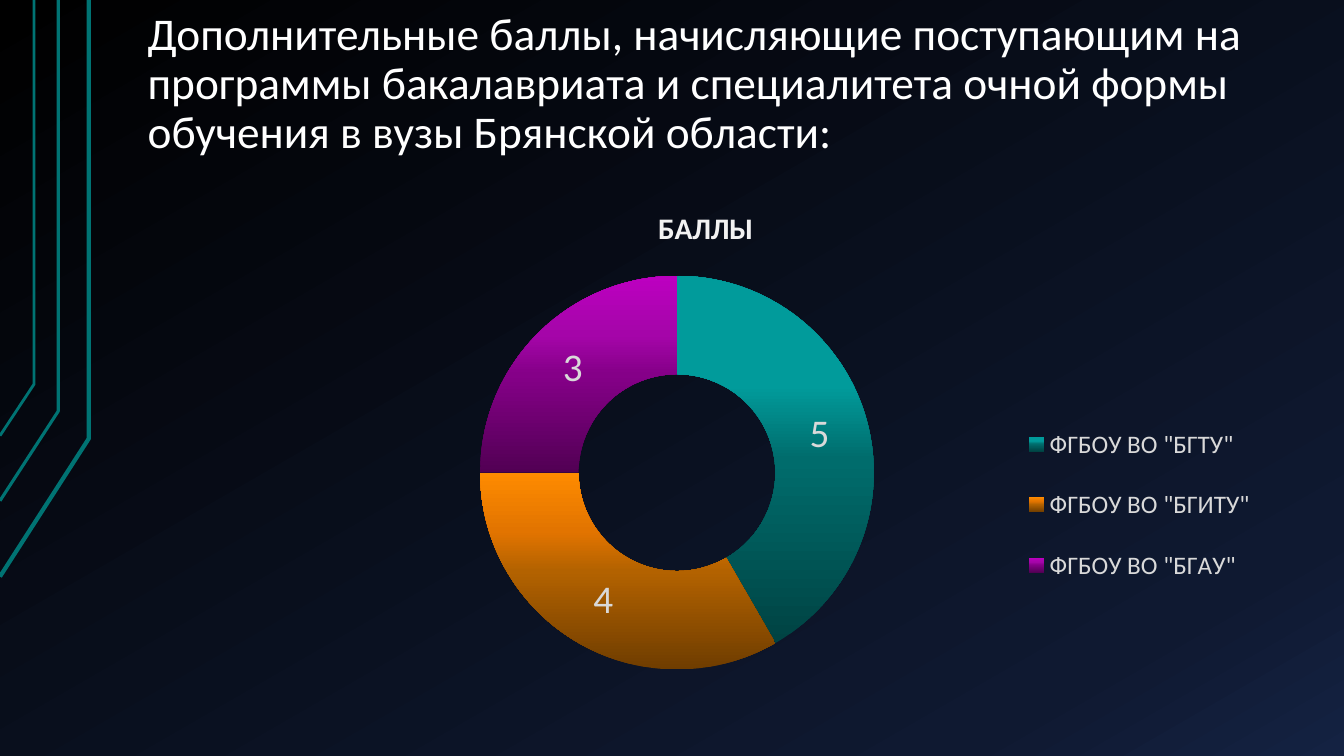
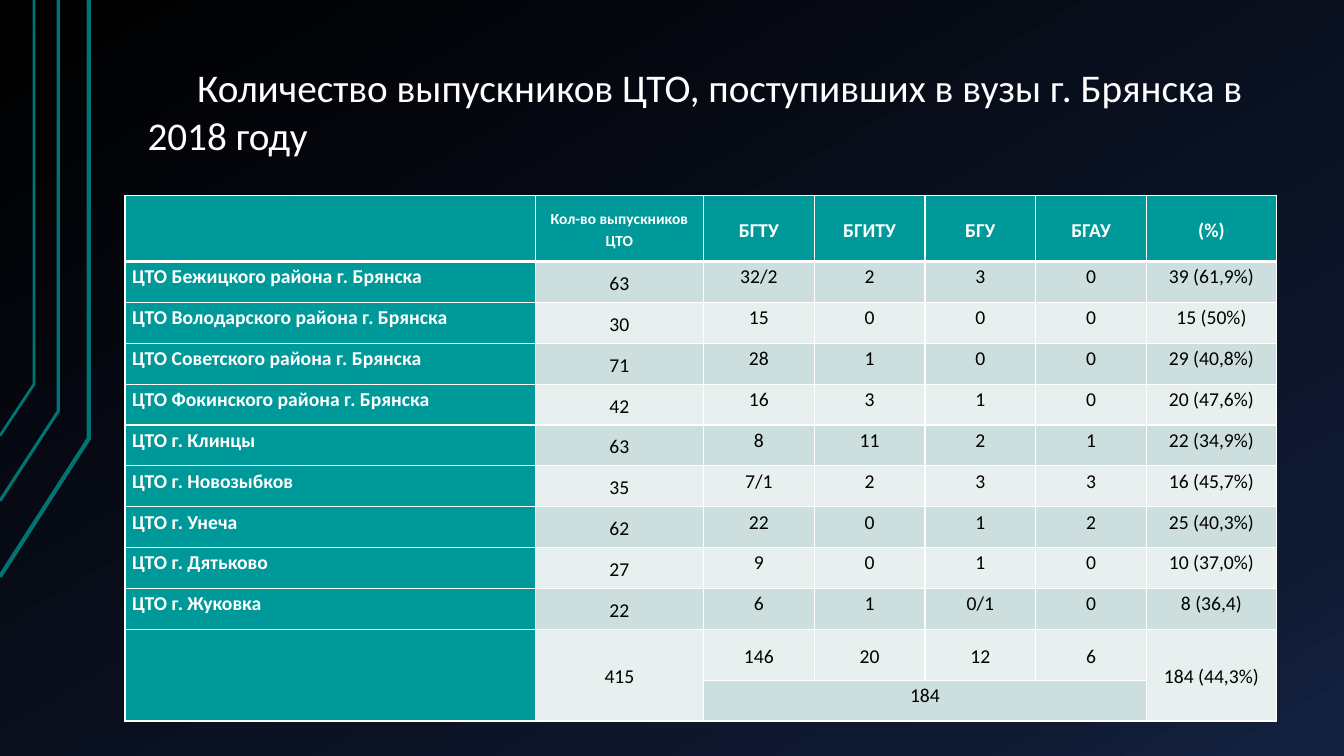
from pptx import Presentation
from pptx.chart.data import CategoryChartData as Data
from pptx.dml.color import RGBColor
from pptx.enum.chart import XL_CHART_TYPE as Kind, XL_LEGEND_POSITION as Side
from pptx.enum.text import MSO_ANCHOR as Anchor, MSO_AUTO_SIZE as Fit, PP_ALIGN as Align
from pptx.oxml import parse_xml
from pptx.oxml.ns import nsdecls, qn
from pptx.util import Cm, Pt

FONT = "Calibri"
WHITE, BLACK, TEAL, EDGE = "FFFFFF", "000000", "009999", "007373"
BANDS = ("E7EFEF", "CCDEDE")
NIGHT = ((0, "000000"), (85, "0F1931"), (100, "142242"))
# Corner points in cm, then line width in points
RAILS = (
    ((0, 14.53), (2.24, 11.05), (2.24, 0), 3),
    ((0, 12.62), (1.47, 10.36), (1.47, 0), 2.25),
    ((0, 10.98), (0.86, 9.68), (0.86, 0), 2),
)


def tint(code):
    return RGBColor.from_string(code)


def style(font, size, code, bold=False):
    font.name, font.size, font.bold = FONT, Pt(size), bold
    font.color.rgb = tint(code)


def shade(grad, stops, angle):
    """Refill a gradFill element with (percent, colour) stops."""
    marks = "".join(
        f'<a:gs pos="{pos * 1000}"><a:srgbClr val="{code}"/></a:gs>'
        for pos, code in stops)
    for child in list(grad):
        grad.remove(child)
    grad.append(parse_xml(f'<a:gsLst {nsdecls("a")}>{marks}</a:gsLst>'))
    grad.append(parse_xml(
        f'<a:lin {nsdecls("a")} ang="{angle * 60000}" scaled="0"/>'))


def place(part, index, box, inner=False):
    """Give a chart part a manual layout, in fractions of the chart."""
    for old in part.findall(qn("c:layout")):
        part.remove(old)
    target = '<c:layoutTarget val="inner"/>' if inner else ""
    modes = '<c:xMode val="edge"/><c:yMode val="edge"/>'
    sizes = "".join(f'<c:{key} val="{val}"/>' for key, val in zip("xywh", box))
    part.insert(index, parse_xml(
        f'<c:layout {nsdecls("c")}><c:manualLayout>{target}{modes}{sizes}'
        '</c:manualLayout></c:layout>'))


def frame(cell, top, bottom):
    """Draw white cell borders, widths in points."""
    props = cell._tc.get_or_add_tcPr()
    for index, (side, width) in enumerate(zip("LRTB", (1, 1, top, bottom))):
        props.insert(index, parse_xml(
            f'<a:ln{side} {nsdecls("a")} w="{Pt(width)}"><a:solidFill>'
            f'<a:srgbClr val="{WHITE}"/></a:solidFill></a:ln{side}>'))


class Deck:
    def __init__(self):
        self.prs = Presentation()
        self.prs.slide_width, self.prs.slide_height = Cm(33.87), Cm(19.05)
        self.slide = None
        master = self.prs.slide_master
        master.background.fill.gradient()
        shade(next(master.element.iter(qn("a:gradFill"))), NIGHT, 60)

    def rails(self):
        """Put the corner lines on the master, behind every slide."""
        for number, (start, *rest, width) in enumerate(RAILS, 101):
            pen = self.slide.shapes.build_freeform(*map(Cm, start))
            pen.add_line_segments([(Cm(x), Cm(y)) for x, y in rest], close=False)
            rail = pen.convert_to_shape()
            rail.fill.background()
            rail.line.color.rgb, rail.line.width = tint(EDGE), Pt(width)
            rail.shadow.inherit = False
            rail.element.nvSpPr.cNvPr.set("id", str(number))
            self.prs.slide_master.shapes.element.append(rail.element)

    def page(self, text, size, space=1.0, indent=0):
        first = self.slide is None
        self.slide = self.prs.slides.add_slide(self.prs.slide_layouts[5])
        if first:
            self.rails()
        title = self.slide.shapes.title
        title.left, title.top = Cm(3.39), Cm(0.76)
        title.width, title.height = Cm(28.78), Cm(3.4)
        body = title.text_frame
        body.word_wrap, body.auto_size = True, Fit.NONE
        body.vertical_anchor = Anchor.BOTTOM
        body.margin_left = body.margin_right = Cm(0.33)
        body.margin_top = body.margin_bottom = Cm(0.18)
        para = body.paragraphs[0]
        para.alignment, para.line_spacing = Align.LEFT, space
        para._p.get_or_add_pPr().set("indent", str(Cm(indent)))
        run = para.add_run()
        run.text = text
        style(run.font, size, WHITE)

    def ring(self, name, parts):
        """Add a doughnut of (category, value, gradient) parts."""
        data = Data()
        data.categories = [part[0] for part in parts]
        data.add_series(name, [part[1] for part in parts])
        chart = self.slide.shapes.add_chart(
            Kind.DOUGHNUT, Cm(3.39), Cm(4.72), Cm(28.78), Cm(12.4), data).chart
        style(chart.font, 10, WHITE)

        chart.has_title = True
        run = chart.chart_title.text_frame.paragraphs[0].add_run()
        run.text = name
        style(run.font, 21.3, "F2F2F2", True)
        chart.chart_title.include_in_layout = False

        chart.has_legend = True
        legend = chart.legend
        legend.position, legend.include_in_layout = Side.RIGHT, False
        style(legend.font, 18, "D9D9D9")
        place(legend._element, 1, (0.77, 0.43, 0.22, 0.43))

        plot = chart.plots[0]
        plot.vary_by_categories = plot.has_data_labels = True
        labels = plot.data_labels
        labels.show_value, labels.show_percentage = True, False
        style(labels.font, 28, "D9D9D9")
        for index in range(len(parts)):
            look = plot.series[0].points[index].format
            look.fill.gradient()
            look.line.fill.background()
        root = chart.element
        for grad, part in zip(root.iter(qn("a:gradFill")), parts):
            shade(grad, part[2], 270)
        place(next(root.iter(qn("c:plotArea"))), 0, (0.3, 0.18, 0.35, 0.8), True)
        next(root.iter(qn("c:holeSize"))).set("val", "75")

    def cell(self, cell, text, size, code, bold, gap, align, anchor):
        cell.margin_left = cell.margin_right = Cm(0.18)
        cell.margin_top = cell.margin_bottom = 0
        cell.vertical_anchor = anchor
        if not text:
            return
        para = cell.text_frame.paragraphs[0]
        para.alignment, para.line_spacing = align, 1.15
        para.space_before = para.space_after = Pt(gap)
        run = para.add_run()
        run.text = text
        style(run.font, size, code, bold)

    def table(self, rows, widths, heights, spans):
        grid = self.slide.shapes.add_table(
            len(rows), len(widths), Cm(3.15), Cm(4.93),
            Cm(sum(widths)), Cm(sum(heights))).table
        for col, width in zip(grid.columns, widths):
            col.width = Cm(width)
        for row, height in zip(grid.rows, heights):
            row.height = Cm(height)
        total = len(rows) - 2
        for r, row in enumerate(rows):
            for c, text in enumerate(row):
                cell = grid.cell(r, c)
                head, label, count = r == 0, c == 0, c == 1
                strong = head or label
                cell.fill.solid()
                cell.fill.fore_color.rgb = tint(TEAL if strong else BANDS[r % 2])
                frame(cell, 3 if r == 1 else 1, 3 if head else 1)
                middle = head or count or r == total
                self.cell(
                    cell, text,
                    size=11 if head and count else 14,
                    code=WHITE if strong else BLACK,
                    bold=strong,
                    gap=0 if count else 6 if head else 3,
                    align=Align.LEFT if label else Align.CENTER,
                    anchor=Anchor.MIDDLE if middle else Anchor.TOP)
        for start, end in spans:
            grid.cell(*start).merge(grid.cell(*end))

    def save(self):
        self.prs.save("out.pptx")


PARTS = (
    ('ФГБОУ ВО "БГТУ"', 5,
     ((0, "004343"), (50, "006C6C"), (70, "019B9B"), (100, "009999"))),
    ('ФГБОУ ВО "БГИТУ"', 4,
     ((0, "6F3D00"), (50, "B36200"), (70, "E27400"), (100, "FE8B00"))),
    ('ФГБОУ ВО "БГАУ"', 3,
     ((0, "520054"), (50, "850088"), (70, "A505A9"), (100, "BC00C0"))),
)
ROWS = (
    ("", "Кол-во выпускников ЦТО", "БГТУ", "БГИТУ", "БГУ", "БГАУ", "(%)"),
    ("ЦТО Бежицкого района г. Брянска", "63", "32/2", "2", "3", "0", "39 (61,9%)"),
    ("ЦТО Володарского района г. Брянска", "30", "15", "0", "0", "0", "15 (50%)"),
    ("ЦТО Советского района г. Брянска", "71", "28", "1", "0", "0", "29 (40,8%)"),
    ("ЦТО Фокинского района г. Брянска", "42", "16", "3", "1", "0", "20 (47,6%)"),
    ("ЦТО г. Клинцы", "63", "8", "11", "2", "1", "22 (34,9%)"),
    ("ЦТО г. Новозыбков", "35", "7/1", "2", "3", "3", "16 (45,7%)"),
    ("ЦТО г. Унеча", "62", "22", "0", "1", "2", "25 (40,3%)"),
    ("ЦТО г. Дятьково", "27", "9", "0", "1", "0", "10 (37,0%)"),
    ("ЦТО г. Жуковка", "22", "6", "1", "0/1", "0", "8 (36,4)"),
    ("", "415", "146", "20", "12", "6", "184 (44,3%)"),
    ("", "", "184", "", "", "", ""),
)
WIDTHS = [10.34, 4.24] + [2.79] * 4 + [3.28]
HEIGHTS = [1.66] + [1.03] * 9 + [1.28, 1.03]
SPANS = [((10, c), (11, c)) for c in (0, 1, 6)] + [((11, 2), (11, 5))]


def main():
    deck = Deck()
    deck.page("Дополнительные баллы, начисляющие поступающим на программы "
              "бакалавриата и специалитета очной формы обучения в вузы "
              "Брянской области:", 32.4, space=0.9)
    deck.ring("БАЛЛЫ", PARTS)
    deck.page("Количество выпускников ЦТО, поступивших в вузы г. Брянска "
              "в 2018 году", 28, indent=1.25)
    deck.table(ROWS, WIDTHS, HEIGHTS, SPANS)
    deck.save()


if __name__ == "__main__":
    main()
